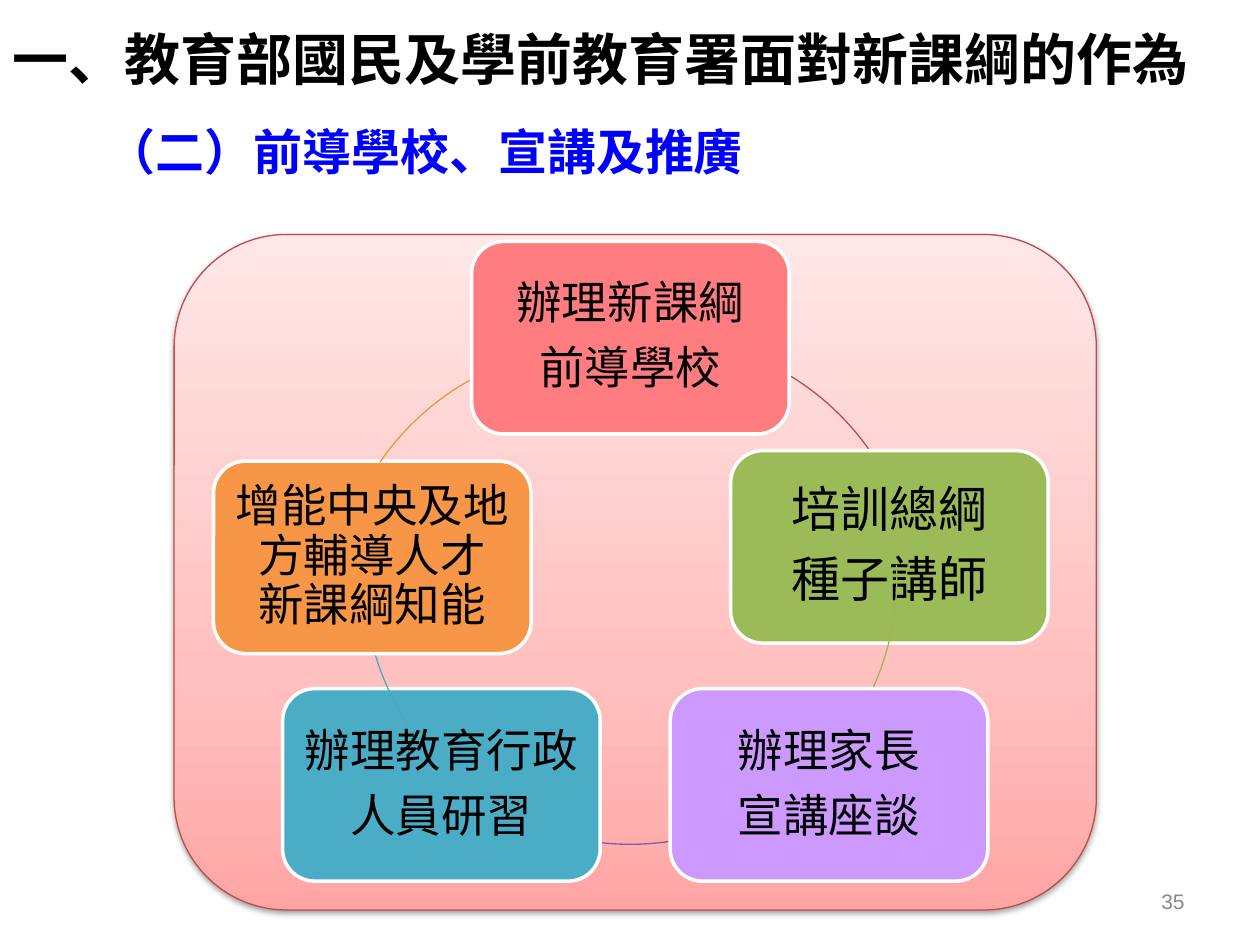
import copy
from collections import namedtuple

from lxml import etree
from pptx import Presentation
from pptx.dml.color import RGBColor
from pptx.enum import shapes, text
from pptx.oxml import ns
from pptx.util import Pt

Box = namedtuple("Box", "left top width height")

BLACK = RGBColor(0, 0, 0)
WHITE = RGBColor(255, 255, 255)
BLUE = RGBColor(0, 0, 255)
GREY = RGBColor(0x89, 0x89, 0x89)
RED_LINE = RGBColor(0xBF, 0x4C, 0x48)
GREEN_LINE = RGBColor(0x98, 0xB9, 0x55)
PURPLE_LINE = RGBColor(0x7D, 0x60, 0xA0)
TEAL_LINE = RGBColor(0x46, 0xAA, 0xC5)
ORANGE_LINE = RGBColor(0xF6, 0x92, 0x40)
RED = RGBColor(0xFF, 0x7C, 0x80)
GREEN = RGBColor(0x9B, 0xBB, 0x59)
PURPLE = RGBColor(0xCC, 0x99, 0xFF)
TEAL = RGBColor(0x4B, 0xAC, 0xC6)
ORANGE = RGBColor(0xF7, 0x96, 0x46)
PANEL_STOPS = [
    (0, RGBColor(0xFF, 0xA6, 0xA5)),
    (0.35, RGBColor(0xFF, 0xC0, 0xBF)),
    (1, RGBColor(0xFF, 0xE7, 0xE7)),
]

CJK = "Noto Sans CJK SC"
CARD_WIDTH, CARD_HEIGHT = 181.5, 110
RING_SIZE = 304.5

CARDS = {
    "seeds": (318, 123.5, GREEN, 28, ["培訓總綱", "種子講師"]),
    "staff": (62, 259.5, TEAL, 26, ["辦理教育行政", "人員研習"]),
    "talent": (22.5, 129.5, ORANGE, 26, ["增能中央及地方輔導人才\n新課綱知能"]),
    "pilot": (170, 4, RED, 26, ["辦理新課綱", "前導學校"]),
    "parents": (283.5, 259.5, PURPLE, 26, ["辦理家長", "宣講座談"]),
}
ARCS = {
    "pilot to seeds": (120.5, 58.5, 293, 325.7, RED_LINE),
    "seeds to parents": (108.5, 44, 357.2, 33.7, GREEN_LINE),
    "parents to staff": (108.5, 44, 78.4, 101.6, PURPLE_LINE),
    "staff to talent": (108.5, 44, 146.2, 182.9, TEAL_LINE),
    "talent to pilot": (91, 64, 214.4, 247.1, ORANGE_LINE),
}
DRAW_ORDER = [
    "pilot to seeds", "seeds", "seeds to parents", "parents to staff", "staff",
    "staff to talent", "talent", "talent to pilot", "pilot", "parents",
]


def points(box):
    return [Pt(value) for value in box]


def style_paragraph(para, size, color, name=CJK, bold=False):
    font = para.font
    font.size = Pt(size)
    font.bold = bold
    font.color.rgb = color
    font.name = name
    defaults = para._p.pPr.find(ns.qn("a:defRPr"))
    etree.SubElement(defaults, ns.qn("a:ea"), typeface=name)


def add_label(page, box, words, size, color, name=CJK, bold=False, wrap=True,
              anchor=text.MSO_ANCHOR.MIDDLE, align=text.PP_ALIGN.LEFT):
    label = page.shapes.add_textbox(*points(box))
    frame = label.text_frame
    frame.word_wrap = wrap
    frame.vertical_anchor = anchor
    para = frame.paragraphs[0]
    para.text = words
    para.alignment = align
    style_paragraph(para, size, color, name, bold)
    return label


def add_heading(page, box):
    title = add_label(page, Box(box.left, box.top, box.width, 66),
                      "一、教育部國民及學前教育署面對新課綱的作為", 32, BLACK, bold=True)
    title.fill.solid()
    title.fill.fore_color.rgb = WHITE
    add_label(page, Box(box.left + 54, box.top + 66, 382.5, 41),
              "（二）前導學校、宣講及推廣", 28, BLUE, bold=True, wrap=False,
              anchor=text.MSO_ANCHOR.TOP)


def add_panel(page, box):
    panel = page.shapes.add_shape(shapes.MSO_SHAPE.ROUNDED_RECTANGLE, *points(box))
    panel.line.color.rgb = RED_LINE
    panel.line.width = Pt(0.75)
    panel.fill.gradient()
    panel.fill.gradient_angle = 90
    stop_list = panel._element.spPr.find(".//" + ns.qn("a:gsLst"))
    stop_list.append(copy.deepcopy(stop_list[0]))
    for stop, (position, color) in zip(panel.fill.gradient_stops, PANEL_STOPS):
        stop.position = position
        stop.color.rgb = color
    panel.shadow.inherit = False
    effects = panel._element.spPr.find(ns.qn("a:effectLst"))
    shadow = etree.SubElement(effects, ns.qn("a:outerShdw"), blurRad=str(Pt(3.1)),
                              dist=str(Pt(1.6)), dir="5400000", rotWithShape="0")
    tint = etree.SubElement(shadow, ns.qn("a:srgbClr"), val=str(BLACK))
    etree.SubElement(tint, ns.qn("a:alpha"), val="38000")


def add_arc(page, box, start, end, color):
    arc = page.shapes.add_shape(shapes.MSO_SHAPE.ARC, *points(box))
    arc.adjustments[0] = start * 0.6
    arc.adjustments[1] = end * 0.6
    arc.shadow.inherit = False
    arc.fill.background()
    arc.line.color.rgb = color
    arc.line.width = Pt(0.75)


def add_card(page, box, color, size, lines):
    card = page.shapes.add_shape(shapes.MSO_SHAPE.ROUNDED_RECTANGLE, *points(box))
    card.shadow.inherit = False
    card.fill.solid()
    card.fill.fore_color.rgb = color
    card.line.color.rgb = WHITE
    card.line.width = Pt(2)
    frame = card.text_frame
    frame.word_wrap = True
    frame.vertical_anchor = text.MSO_ANCHOR.MIDDLE
    frame.margin_left = frame.margin_right = Pt(2.5)
    frame.margin_top = frame.margin_bottom = Pt(2.5)
    for index, line in enumerate(lines):
        para = frame.add_paragraph() if index else frame.paragraphs[0]
        para.text = line
        para.alignment = text.PP_ALIGN.CENTER
        para.line_spacing = 0.9
        para.space_after = Pt(size * 0.35)
        style_paragraph(para, size, BLACK)


def add_cycle(page, box):
    add_panel(page, box)
    for name in DRAW_ORDER:
        if name in CARDS:
            left, top, *style = CARDS[name]
            add_card(page, Box(box.left + left, box.top + top, CARD_WIDTH, CARD_HEIGHT),
                     *style)
        else:
            left, top, *style = ARCS[name]
            add_arc(page, Box(box.left + left, box.top + top, RING_SIZE, RING_SIZE),
                    *style)


def main():
    deck = Presentation()
    deck.slide_width, deck.slide_height = Pt(720), Pt(540)
    page = deck.slides.add_slide(deck.slide_layouts[6])
    add_label(page, Box(516, 500.5, 168, 29), "35", 12, GREY, name="Arial",
              align=text.PP_ALIGN.RIGHT)
    add_heading(page, Box(0, 0, 720, 107))
    add_cycle(page, Box(99.5, 134, 527, 386))
    deck.save("out.pptx")


if __name__ == "__main__":
    main()
